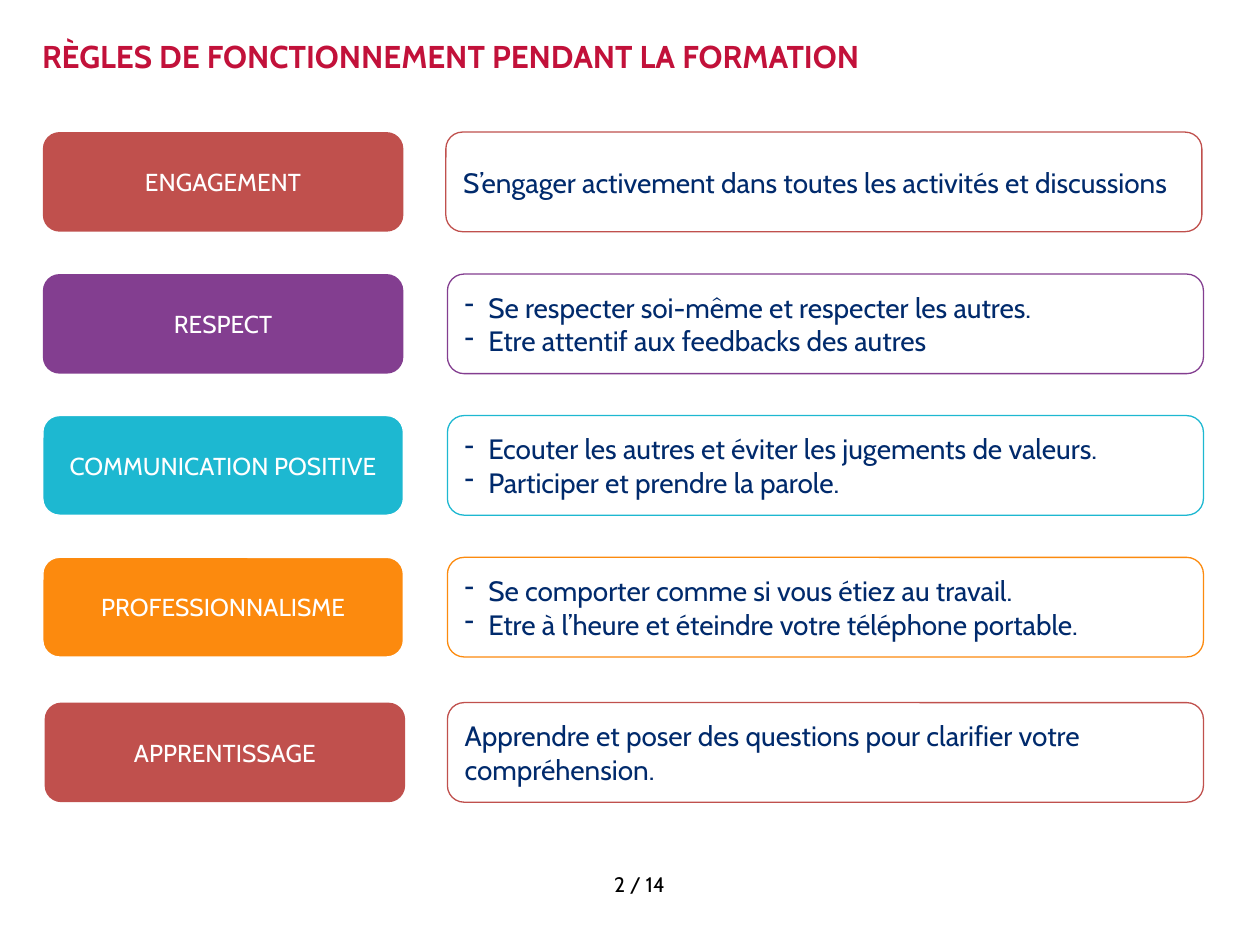
from lxml.etree import SubElement
from pptx import Presentation
from pptx.dml.color import RGBColor
from pptx.enum.shapes import MSO_SHAPE as SHAPE
from pptx.enum.text import MSO_ANCHOR as ANCHOR, PP_ALIGN as ALIGN
from pptx.oxml.ns import qn
from pptx.util import Pt

FONT = "Cabin"
RED, PURPLE, CYAN, ORANGE = "C0504D", "833E90", "1DB8D1", "FC8A0E"
WHITE, NAVY, CRIMSON, BLACK = "FFFFFF", "002A6C", "C2113A", "000000"

LABEL_W, RULE_W, ROW_H = 206, 432, 56.9
INDENT = 13.5

# top, label left, rule left, colour, label outline, label, rule lines
RULES = [
    (75.5, 24.5, 254.8, RED, None, "ENGAGEMENT",
     ["S’engager activement dans toutes les activités et discussions"]),
    (156.6, 24.5, 255.7, PURPLE, None, "RESPECT",
     ["Se respecter soi-même et respecter les autres.",
      "Etre attentif aux feedbacks des autres"]),
    (237.5, 24.5, 255.7, CYAN, WHITE, "COMMUNICATION POSITIVE",
     ["Ecouter les autres et éviter les jugements de valeurs.",
      "Participer et prendre la parole."]),
    (318.5, 24.5, 255.7, ORANGE, WHITE, "PROFESSIONNALISME",
     ["Se comporter comme si vous étiez au travail.",
      "Etre à l’heure et éteindre votre téléphone portable."]),
    (401.5, 25.5, 255.7, RED, None, "APPRENTISSAGE",
     ["Apprendre et poser des questions pour clarifier votre compréhension."]),
]


def rgb(color):
    return RGBColor.from_string(color)


def write(tf, lines, size, color, align, bold=False):
    tf.word_wrap = True
    tf.text = "\n".join(lines)
    for p in tf.paragraphs:
        p.alignment = align
        for r in p.runs:
            r.font.name, r.font.size, r.font.bold = FONT, Pt(size), bold
            r.font.color.rgb = rgb(color)


def add_dash(p, color):
    pPr = p._p.get_or_add_pPr()
    pPr.set("marL", str(Pt(INDENT)))
    pPr.set("indent", str(-Pt(INDENT)))
    clr = SubElement(pPr, qn("a:buClr"))
    SubElement(clr, qn("a:srgbClr"), val=color)
    SubElement(pPr, qn("a:buChar"), char="-")


def add_box(s, left, top, width, fill, line):
    sp = s.shapes.add_shape(SHAPE.ROUNDED_RECTANGLE, Pt(left), Pt(top),
                            Pt(width), Pt(ROW_H))
    sp.shadow.inherit = False
    if fill:
        sp.fill.solid()
        sp.fill.fore_color.rgb = rgb(fill)
    else:
        sp.fill.background()
    if line:
        sp.line.color.rgb = rgb(line)
        sp.line.width = Pt(0.75)
    else:
        sp.line.fill.background()
    tf = sp.text_frame
    tf.vertical_anchor = ANCHOR.MIDDLE
    return tf


def add_rule(s, top, label_x, rule_x, color, outline, label, lines):
    tf = add_box(s, label_x, top, LABEL_W, color, outline)
    write(tf, [label], 14, WHITE, ALIGN.CENTER)
    tf = add_box(s, rule_x, top, RULE_W, None, color)
    write(tf, lines, 16, NAVY, ALIGN.LEFT)
    if len(lines) > 1:
        for p in tf.paragraphs:
            add_dash(p, NAVY)


def add_title(s, text):
    sp = s.shapes.title
    sp.left, sp.top, sp.width, sp.height = Pt(24), Pt(21), Pt(672), Pt(55)
    tf = sp.text_frame
    tf.margin_left = tf.margin_top = tf.margin_right = tf.margin_bottom = 0
    tf.vertical_anchor = ANCHOR.TOP
    write(tf, [text], 18, CRIMSON, ALIGN.LEFT, bold=True)


def add_page_number(s, text):
    sp = s.shapes.add_textbox(Pt(315.5), Pt(494.5), Pt(100), Pt(22))
    write(sp.text_frame, [text], 12, BLACK, ALIGN.CENTER)


def main():
    prs = Presentation()
    prs.slide_width, prs.slide_height = Pt(720), Pt(540)
    s = prs.slides.add_slide(prs.slide_layouts[5])

    # Title
    add_title(s, "RÈGLES DE FONCTIONNEMENT PENDANT LA FORMATION")

    # One label and one rule box per row
    for rule in RULES:
        add_rule(s, *rule)

    # Footer
    add_page_number(s, "2 / 14")
    prs.save("out.pptx")


if __name__ == "__main__":
    main()
